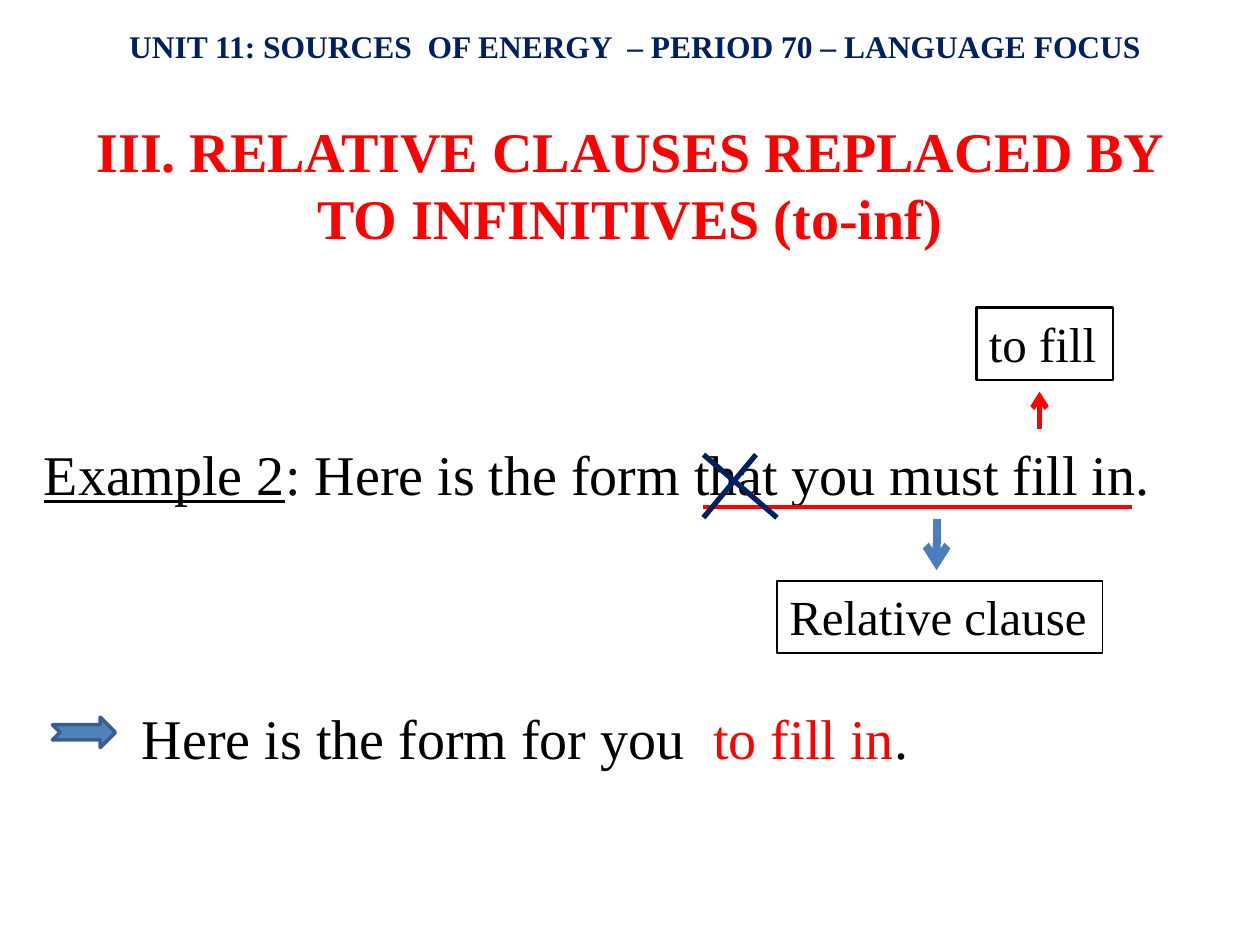
from lxml.etree import SubElement
from pptx import Presentation
from pptx.dml.color import RGBColor
from pptx.enum.shapes import MSO_CONNECTOR, MSO_SHAPE
from pptx.enum.text import MSO_ANCHOR, MSO_AUTO_SIZE, PP_ALIGN
from pptx.oxml.ns import qn
from pptx.util import Inches, Pt

THEME = {
    "font": "Times New Roman",
    "black": RGBColor(0x00, 0x00, 0x00),
    "red": RGBColor(0xFF, 0x00, 0x00),
    "navy": RGBColor(0x00, 0x20, 0x60),
    "steel": RGBColor(0x4B, 0x7E, 0xBC),
    "blue": RGBColor(0x4F, 0x81, 0xBD),
    "edge": RGBColor(0x3A, 0x5F, 0x8C),
    "body": Pt(32),
    "label": Pt(28),
    "header": Pt(18),
}

prs = Presentation()
prs.slide_width, prs.slide_height = Inches(10), Inches(7.5)
COL, ROW = prs.slide_width / 120, prs.slide_height / 90
s = prs.slides.add_slide(prs.slide_layouts[5])


def grid(x, y, w, h):
    return [round(v) for v in (x * COL, y * ROW, w * COL, h * ROW)]


def write(sp, size, runs, frame, para):
    tf = sp.text_frame
    p = tf.paragraphs[0]
    for obj, values in ((tf, frame), (p, para)):
        for name, value in values.items():
            setattr(obj, name, value)
    for text, color, style in runs:
        r = p.add_run()
        r.text = text
        r.font.color.rgb = THEME[color]
        for name, value in {"name": THEME["font"], "size": THEME[size], **style}.items():
            setattr(r.font, name, value)


bold = {"bold": True}
wrapped = {"word_wrap": True}
growing = {"word_wrap": True, "auto_size": MSO_AUTO_SIZE.SHAPE_TO_FIT_TEXT}
centred = {"alignment": PP_ALIGN.CENTER}
left = {"alignment": PP_ALIGN.LEFT}

title = s.shapes.title
title.left, title.top, title.width, title.height = grid(6, 10, 108, 15)
write(title, "body",
      [("III. RELATIVE CLAUSES REPLACED BY TO INFINITIVES (to-inf)", "red", bold)],
      {"word_wrap": True, "auto_size": MSO_AUTO_SIZE.NONE,
       "vertical_anchor": MSO_ANCHOR.MIDDLE}, centred)

texts = [
    ((3, 41.3, 113, 7), "body",
     [("Example 2", "black", {"underline": True}),
      (": Here is the form that you must fill in.", "black", {})],
     wrapped, {"space_before": Pt(4)}),
    ((11, 66.4, 88, 7.7), "body",
     [(" Here is the form for you  ", "black", {}), ("to fill in", "red", {}),
      (".", "black", {})], growing, left),
    ((3, 2, 115, 4.8), "header",
     [("UNIT 11: SOURCES  OF ENERGY  – PERIOD 70 – LANGUAGE FOCUS", "navy", bold)],
     growing, centred),
]
for box, size, runs, frame, para in texts:
    write(s.shapes.add_textbox(*grid(*box)), size, runs, frame, para)

labels = [
    ((74, 55.3, 31, 6.9), "Relative clause", 1, {**growing, "word_wrap": False}),
    ((93, 29.3, 13, 6.9), "to fill", 1.5, growing),
]
for box, text, width, frame in labels:
    sp = s.shapes.add_shape(MSO_SHAPE.RECTANGLE, *grid(*box))
    sp.shadow.inherit = False
    sp.fill.background()
    sp.line.color.rgb, sp.line.width = THEME["black"], Pt(width)
    write(sp, "label", [(text, "black", {})],
          {**frame, "vertical_anchor": MSO_ANCHOR.TOP}, left)

sp = s.shapes.add_shape(MSO_SHAPE.NOTCHED_RIGHT_ARROW, *grid(5, 68.3, 6, 2.9))
sp.shadow.inherit = False
sp.fill.solid()
sp.fill.fore_color.rgb = THEME["blue"]
sp.line.color.rgb, sp.line.width = THEME["edge"], Pt(2)

lines = [
    ((67, 48.3, 107.8, 48.3), "red", 2.25, False),
    ((89.2, 49.4, 89.2, 54.3), "steel", 4.5, True),
    ((67, 43.3, 74, 49.3), "navy", 3, False),
    ((72, 43.3, 67, 49.3), "navy", 3, False),
    ((99, 40.9, 99, 37.3), "red", 3, True),
]
for ends, color, width, arrow in lines:
    line = s.shapes.add_connector(MSO_CONNECTOR.STRAIGHT, *grid(*ends))
    line.line.color.rgb, line.line.width = THEME[color], Pt(width)
    if arrow:
        SubElement(line.line._get_or_add_ln(), qn("a:tailEnd"), type="arrow")
    SubElement(line._element.spPr, qn("a:effectLst"))

prs.save("out.pptx")
